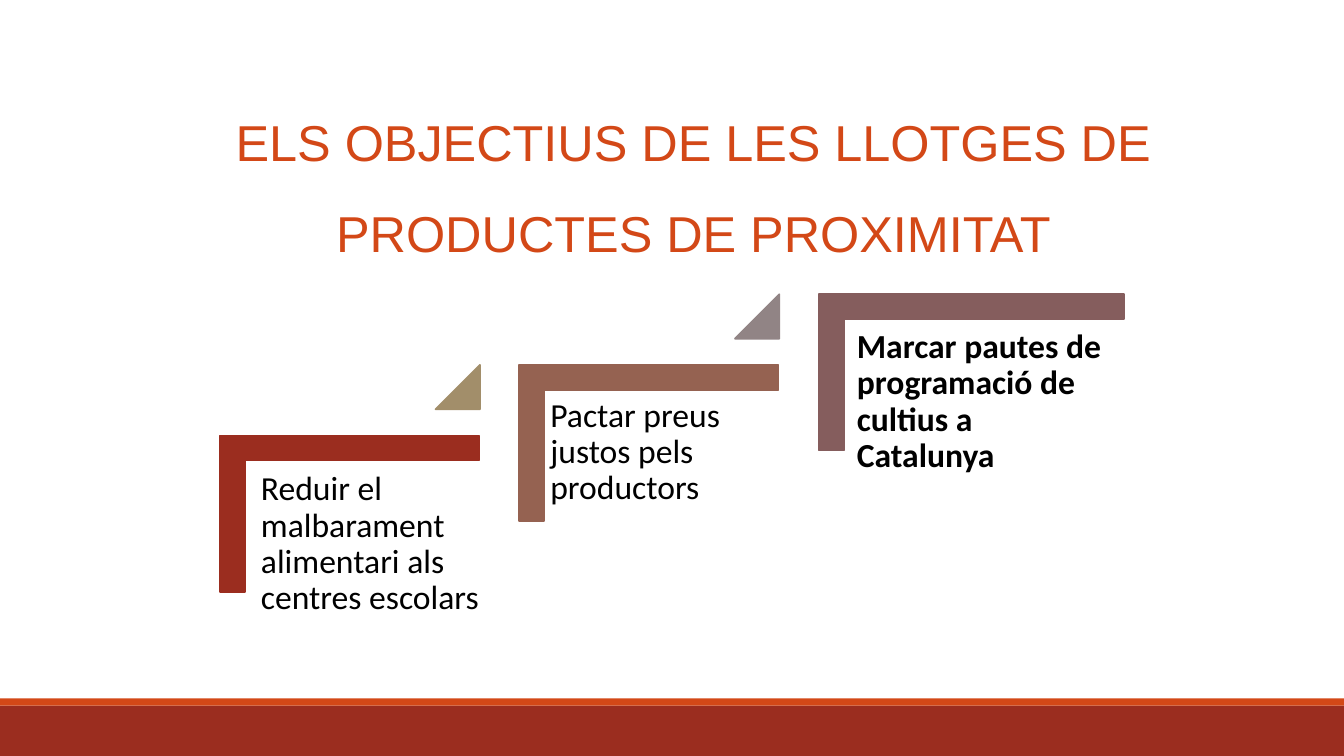
from dataclasses import dataclass

from pptx import Presentation
from pptx.dml.color import RGBColor
from pptx.enum import shapes, text
from pptx.util import Inches, Pt

BLACK = RGBColor(0x00, 0x00, 0x00)
ORANGE = RGBColor(0xD3, 0x48, 0x17)
BRICK = RGBColor(0x9B, 0x2D, 0x1F)
BROWN = RGBColor(0x95, 0x62, 0x51)
MAUVE = RGBColor(0x85, 0x5D, 0x5D)
SAND = RGBColor(0xA2, 0x8E, 0x6A)
GREY = RGBColor(0x91, 0x84, 0x85)

FIRST_LEFT, FIRST_TOP = 2.18, 4.32
STEP_RUN, STEP_RISE = 2.97, 0.7
BRACKET_HEIGHT = 1.55
BRACKET_THICKNESS = 0.16
TRIANGLE_SIZE = 0.44
TRIANGLE_OFFSET = 0.83


@dataclass
class Step:
    goal: str
    color: RGBColor
    bracket_width: float
    text_left: float
    text_top: float
    text_width: float
    bold: bool = False
    triangle_color: RGBColor | None = None


STEPS = [
    Step("Reduir el malbarament alimentari als centres escolars",
         BRICK, 2.57, 2.49, 4.58, 2.57),
    Step("Pactar preus justos pels productors",
         BROWN, 2.57, 5.36, 3.85, 2.58, triangle_color=SAND),
    Step("Marcar pautes de programació de cultius a Catalunya",
         MAUVE, 3.03, 8.4, 3.17, 2.78, bold=True, triangle_color=GREY),
]


def add_filled(slide, preset, left: float, top: float, width: float,
               height: float, color: RGBColor, outlined: bool = True):
    shape = slide.shapes.add_shape(
        preset, Inches(left), Inches(top), Inches(width), Inches(height))
    shape.shadow.inherit = False
    shape.fill.solid()
    shape.fill.fore_color.rgb = color
    if outlined:
        shape.line.color.rgb = color
        shape.line.width = Pt(1.25)
    else:
        shape.line.fill.background()
    return shape


def add_bracket(slide, left: float, top: float, width: float,
                color: RGBColor) -> None:
    """Add a corner turned by 90°, given the place where it shows."""
    shift = (width - BRACKET_HEIGHT) / 2
    bracket = add_filled(slide, shapes.MSO_SHAPE.CORNER, left + shift,
                         top - shift, BRACKET_HEIGHT, width, color)
    bracket.rotation = 90
    for index in range(2):
        bracket.adjustments[index] = BRACKET_THICKNESS


def add_goal(slide, step: Step) -> None:
    box = slide.shapes.add_textbox(
        Inches(step.text_left), Inches(step.text_top),
        Inches(step.text_width), Inches(2.04))
    frame = box.text_frame
    frame.word_wrap = True
    frame.margin_left = frame.margin_right = Inches(0.1)
    frame.margin_top = frame.margin_bottom = Inches(0.1)
    goal = frame.paragraphs[0]
    goal.text = step.goal
    goal.line_spacing = 0.9
    goal.font.name = "Calibri"
    goal.font.size = Pt(24)
    goal.font.bold = step.bold
    goal.font.color.rgb = BLACK


def add_step(slide, index: int, step: Step) -> None:
    left = FIRST_LEFT + index * STEP_RUN
    top = FIRST_TOP - index * STEP_RISE
    if step.triangle_color is not None:
        triangle = add_filled(
            slide, shapes.MSO_SHAPE.ISOSCELES_TRIANGLE, left - TRIANGLE_OFFSET,
            top, TRIANGLE_SIZE, TRIANGLE_SIZE, step.triangle_color)
        triangle.adjustments[0] = 1
    add_bracket(slide, left, top, step.bracket_width, step.color)
    add_goal(slide, step)


def set_title(slide) -> None:
    title = slide.shapes.title
    title.left, title.top = Inches(0.73), Inches(0.75)
    title.width, title.height = Inches(12.3), Inches(1.84)
    frame = title.text_frame
    frame.word_wrap = True
    frame.auto_size = text.MSO_AUTO_SIZE.NONE
    frame.vertical_anchor = text.MSO_ANCHOR.TOP
    heading = frame.paragraphs[0]
    heading.text = "ELS OBJECTIUS DE LES LLOTGES DE PRODUCTES DE PROXIMITAT"
    heading.alignment = text.PP_ALIGN.CENTER
    heading.line_spacing = 1.5
    heading.font.name = "Arial"
    heading.font.size = Pt(36)
    heading.font.color.rgb = ORANGE


def main() -> None:
    deck = Presentation()
    deck.slide_width, deck.slide_height = Inches(13.33), Inches(7.5)
    slide = deck.slides.add_slide(deck.slide_layouts[5])
    set_title(slide)
    for top, height, color in ((7, 0.5, BRICK), (6.93, 0.07, ORANGE)):
        add_filled(slide, shapes.MSO_SHAPE.RECTANGLE, 0, top, 13.33, height,
                   color, outlined=False)
    for index, step in enumerate(STEPS):
        add_step(slide, index, step)
    deck.save("out.pptx")


if __name__ == "__main__":
    main()
